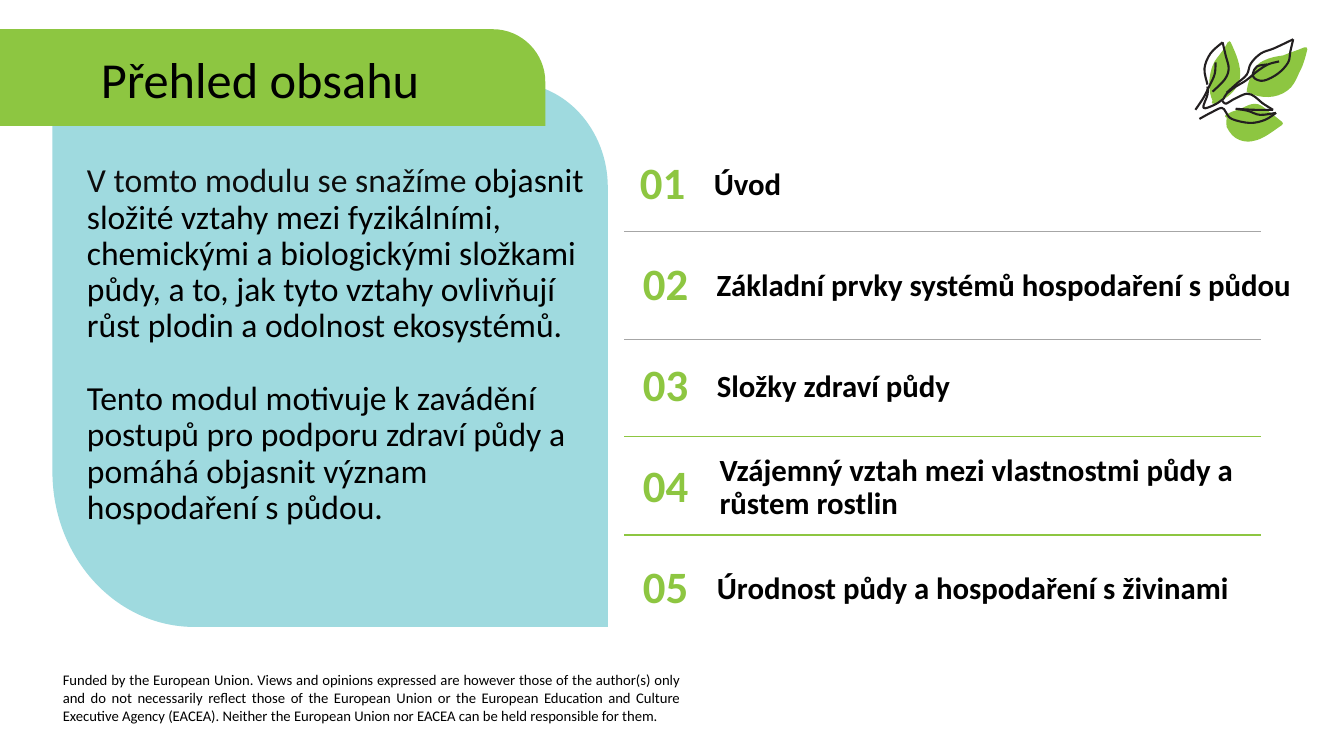
from dataclasses import dataclass

import lxml.etree
import pptx
import pptx.dml.color
import pptx.enum.shapes
import pptx.enum.text
import pptx.oxml.ns
import pptx.util

Pt = pptx.util.Pt
qn = pptx.oxml.ns.qn
ALIGN = pptx.enum.text.PP_ALIGN
ANCHOR = pptx.enum.text.MSO_ANCHOR
GREEN, AQUA, GREY, INK, BLACK = "8DC641", "9FDADF", "A6A6A6", "231F20", "000000"
UNIT = Pt(0.72)


@dataclass
class Row:
    label: str
    text: str
    left: float
    start: float
    width: float


@dataclass
class Rule:
    top: float
    color: str
    weight: float


@dataclass
class Form:
    color: str
    curve: list


ROWS = [
    Row("01", "Úvod", 445.7, 502.8, 351.4),
    Row("02", "Základní prvky systémů hospodaření s půdou", 447.8, 504.8, 458.6),
    Row("03", "Složky zdraví půdy", 447.8, 505, 351.4),
    Row("04", "Vzájemný vztah mezi vlastnostmi půdy a růstem rostlin", 447.8, 506.9, 438.5),
    Row("05", "Úrodnost půdy a hospodaření s živinami", 447.8, 505, 401.8),
]
RULES = [Rule(165.6, GREY, 0.75), Rule(242.6, GREY, 0.75),
         Rule(312, GREEN, 1), Rule(382.3, GREEN, 1)]
PANELS = [
    Form(AQUA, [(603, 622), (193, 622), (115, 622, 52, 553, 52, 468), (52, 82),
                (508, 82), (561, 82, 603, 129, 603, 186)]),
    Form(GREEN, [(-2, 29), (489, 29), (518, 29, 541, 53, 541, 81), (541, 125),
                 (0, 125), (0, 48), (0, 44, 0, 41, -1, 37)]),
]
LEAVES = [
    Form(GREEN, [(1208, 102), (1218, 97, 1228, 89, 1230, 78),
                 (1232, 66, 1226, 53, 1221, 42), (1221, 40, 1219, 41, 1218, 42),
                 (1215, 48, 1211, 53, 1207, 58), (1204, 62, 1202, 67, 1201, 72),
                 (1199, 81, 1199, 91, 1203, 100), (1201, 102, 1203, 104, 1205, 103)]),
    Form(GREEN, [(1277, 90), (1283, 86, 1286, 79, 1289, 72),
                 (1293, 65, 1295, 57, 1297, 49), (1297, 47, 1296, 46, 1294, 47),
                 (1287, 50, 1280, 52, 1273, 55), (1266, 56, 1260, 57, 1254, 60),
                 (1249, 62, 1245, 66, 1243, 71), (1240, 77, 1238, 83, 1237, 89),
                 (1236, 91, 1237, 92, 1239, 92), (1251, 98, 1266, 98, 1277, 90)]),
    Form(GREEN, [(1272, 124), (1273, 123, 1273, 122, 1272, 121),
                 (1267, 117, 1262, 113, 1257, 109), (1253, 106, 1250, 103, 1245, 103),
                 (1241, 103, 1237, 105, 1233, 107), (1229, 108, 1226, 110, 1222, 111),
                 (1220, 112, 1218, 113, 1216, 114), (1215, 114, 1215, 117, 1217, 117),
                 (1216, 120, 1217, 124, 1217, 126), (1220, 132, 1224, 137, 1230, 139),
                 (1246, 145, 1260, 132, 1272, 124)]),
]
VEINS = [
    [(1198, 84), (1195, 68), (1201, 53), (1213, 42)],
    [(1213, 42), (1216, 55), (1219, 68), (1215, 79), (1203, 91)],
    [(1206, 62), (1205, 74), (1199, 87), (1194, 97), (1186, 109)],
    [(1198, 86), (1198, 94), (1194, 107), (1205, 104), (1214, 98)],
    [(1214, 98), (1217, 93), (1226, 86), (1236, 80), (1247, 71), (1258, 64), (1269, 61)],
    [(1217, 92), (1227, 83), (1237, 74), (1241, 63), (1251, 53), (1264, 48), (1283, 39)],
    [(1283, 39), (1280, 52), (1278, 62), (1268, 73), (1254, 80), (1245, 78),
     (1243, 73), (1247, 66), (1257, 64)],
    [(1190, 118), (1201, 112), (1212, 107), (1216, 111), (1222, 118), (1240, 122),
     (1255, 119), (1266, 112)],
    [(1266, 112), (1250, 114), (1238, 110), (1226, 108)],
    [(1226, 108), (1245, 109), (1263, 109)],
    [(1263, 109), (1252, 102), (1245, 96), (1237, 93), (1225, 98), (1216, 103), (1213, 100)],
]
STORY = [
    [("V tomto modulu se snažíme ", "0D0D0D"),
     ("objasnit složité vztahy mezi fyzikálními, chemickými a biologickými složkami "
      "půdy, a to, jak tyto vztahy ovlivňují růst plodin a odolnost ekosystémů.", BLACK)],
    [("Tento modul motivuje k zavádění postupů pro podporu zdraví půdy a pomáhá "
      "objasnit význam hospodaření s půdou.", BLACK)],
]
NOTICE = (
    "Funded by the European Union. Views and opinions expressed are however those of the "
    "author(s) only and do not necessarily reflect those of the European Union or the "
    "European Education and Culture Executive Agency (EACEA). Neither the European Union "
    "nor EACEA can be held responsible for them.")


def shade(color: str) -> pptx.dml.color.RGBColor:
    return pptx.dml.color.RGBColor.from_string(color)


def apply(target, values: dict) -> None:
    for name, value in values.items():
        setattr(target, name, value)


def smooth(dots: list) -> list:
    ends = [dots[0], *dots, dots[-1]]
    curve = [dots[0]]
    for a, b, c, d in zip(ends, ends[1:], ends[2:], ends[3:]):
        curve.append((b[0] + (c[0] - a[0]) / 6, b[1] + (c[1] - a[1]) / 6,
                      c[0] - (d[0] - b[0]) / 6, c[1] - (d[1] - b[1]) / 6, *c))
    return curve


def sketch(slide, curves: list, close: bool):
    pen = slide.shapes.build_freeform(*(v * UNIT for v in curves[0][0]))
    for i, curve in enumerate(curves):
        dots = [(part[-2] * UNIT, part[-1] * UNIT) for part in curve]
        if i:
            pen.move_to(*dots[0])
        pen.add_line_segments(dots[1:], close=close)
    shape = pen.convert_to_shape()
    shape.shadow.inherit = False
    parts = [part for curve in curves for part in curve[1:]]
    for node, part in zip(list(shape.element.iter(qn("a:lnTo"))), parts):
        if len(part) == 6:
            node.tag = qn("a:cubicBezTo")
            for i in (0, 1):
                x, y = part[2 * i:2 * i + 2]
                knot = lxml.etree.Element(qn("a:pt"), x=str(round(x * UNIT - shape.left)),
                                          y=str(round(y * UNIT - shape.top)))
                node.insert(i, knot)
    return shape


def draw_form(slide, form: Form) -> None:
    shape = sketch(slide, [form.curve], True)
    shape.fill.solid()
    shape.fill.fore_color.rgb = shade(form.color)
    shape.line.fill.background()


def draw_rule(slide, rule: Rule) -> None:
    line = slide.shapes.add_connector(
        pptx.enum.shapes.MSO_CONNECTOR.STRAIGHT,
        Pt(900.7), Pt(rule.top), Pt(445.7), Pt(rule.top))
    line.line.color.rgb = shade(rule.color)
    line.line.width = Pt(rule.weight)
    lxml.etree.SubElement(line.element.spPr, qn("a:effectLst"))


def write(shape, paras: list, size: float, bold: bool = False, align=ALIGN.LEFT,
          anchor=ANCHOR.MIDDLE, pitch: float = 0.9, gap: float = 0) -> None:
    frame = shape.text_frame
    apply(frame, {"word_wrap": True, "vertical_anchor": anchor,
                  "auto_size": pptx.enum.text.MSO_AUTO_SIZE.NONE})
    for i, pieces in enumerate(paras):
        para = frame.add_paragraph() if i else frame.paragraphs[0]
        apply(para, {"alignment": align, "line_spacing": pitch,
                     "space_before": Pt(gap if i else 0)})
        for text, color in pieces:
            run = para.add_run()
            run.text = text
            apply(run.font, {"name": "Calibri", "size": Pt(size), "bold": bold})
            run.font.color.rgb = shade(color)


def add_box(slide, left: float, top: float, width: float, height: float):
    return slide.shapes.add_textbox(Pt(left), Pt(top), Pt(width), Pt(height))


def main() -> None:
    deck = pptx.Presentation()
    apply(deck, {"slide_width": Pt(960), "slide_height": Pt(540)})
    slide = deck.slides.add_slide(deck.slide_layouts[5])
    for panel in PANELS:
        draw_form(slide, panel)
    for rule in RULES:
        draw_rule(slide, rule)
    title = slide.shapes.title
    apply(title, {"left": Pt(64.8), "top": Pt(30.2), "width": Pt(396.7), "height": Pt(56.9)})
    write(title, [[("Přehled obsahu", BLACK)]], 36)
    title.element.getparent().append(title.element)
    write(add_box(slide, 55, 113.4, 375.1, 313.9), STORY, 24, anchor=ANCHOR.TOP, gap=26)
    write(add_box(slide, 37.8, 475.9, 455.4, 47.5), [[(NOTICE, BLACK)]], 10.5,
          align=ALIGN.JUSTIFY, anchor=ANCHOR.TOP, pitch=1)
    for i, row in enumerate(ROWS):
        top = 105.4 + 72.1 * i
        write(add_box(slide, row.left, top, 55.4, 54), [[(row.label, GREEN)]], 32,
              bold=True, align=ALIGN.CENTER)
        write(add_box(slide, row.start, top, row.width, 54), [[(row.text, BLACK)]], 22, bold=True)
    for leaf in LEAVES:
        draw_form(slide, leaf)
    veins = sketch(slide, [smooth(vein) for vein in VEINS], False)
    veins.fill.background()
    veins.line.color.rgb = shade(INK)
    veins.line.width = Pt(1.5)
    deck.save("out.pptx")


if __name__ == "__main__":
    main()
